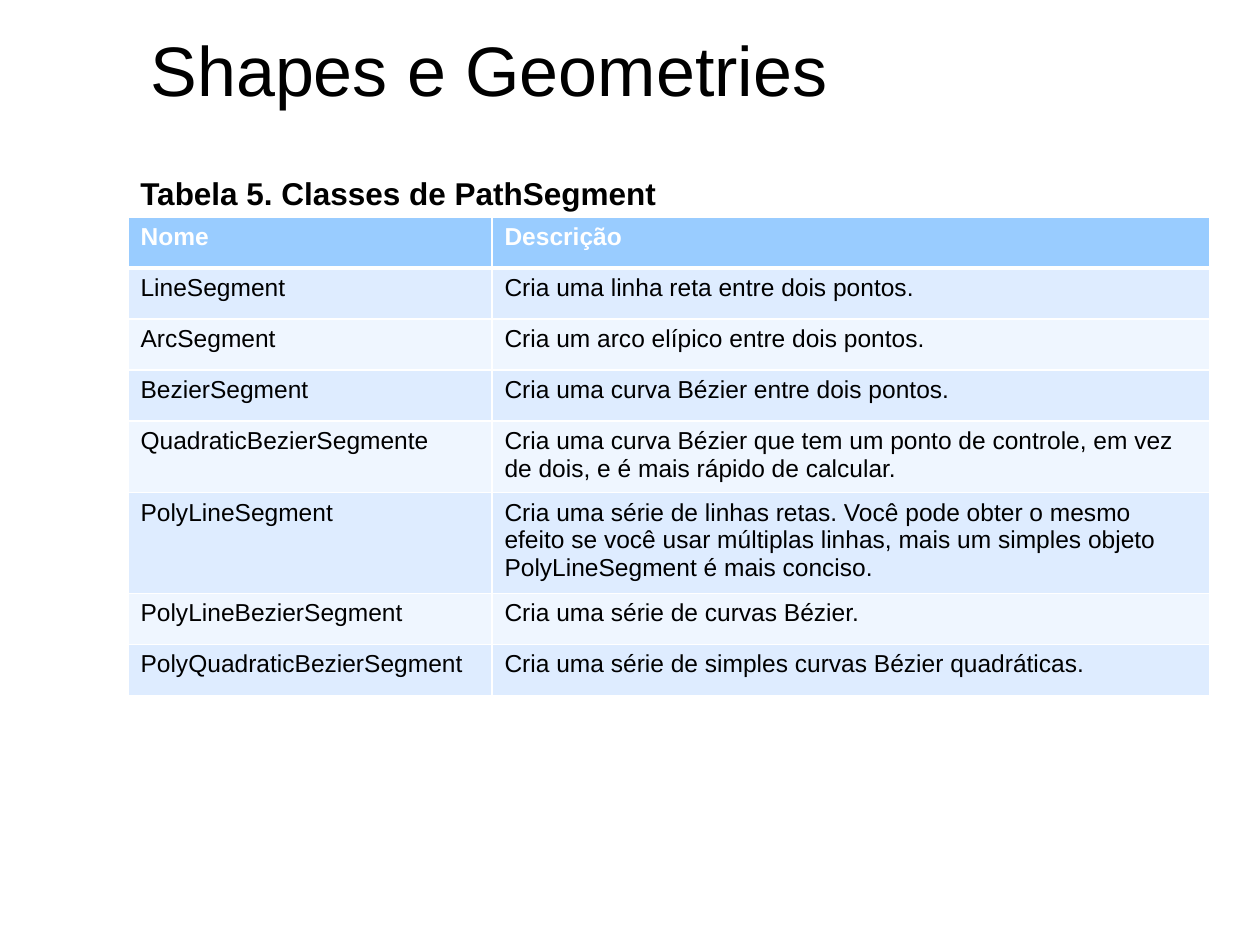
from lxml import etree
from pptx import Presentation
from pptx.dml.color import RGBColor
from pptx.enum.text import MSO_ANCHOR, PP_ALIGN
from pptx.oxml.ns import qn
from pptx.util import Emu, Pt

LEFT, TOP = PP_ALIGN.LEFT, MSO_ANCHOR.TOP
TITLE_ONLY = 5


def px(pixels):
    return Emu(round(pixels * 914400 / 126))


def write(frame, text, size, color, bold=False):
    frame.word_wrap = True
    frame.vertical_anchor = TOP
    paragraph = frame.paragraphs[0]
    paragraph.alignment = LEFT
    run = paragraph.add_run()
    run.text = text
    font_format = {"name": "Arial", "size": Pt(size), "bold": bold}
    for attribute, value in font_format.items():
        setattr(run.font, attribute, value)
    run.font.color.rgb = RGBColor.from_string(color)


prs = Presentation()
prs.slide_width, prs.slide_height = px(1260), px(945)
slide = prs.slides.add_slide(prs.slide_layouts[TITLE_ONLY])

# Title
title = slide.shapes.title
title_place = {"left": px(138), "top": px(20), "width": px(758), "height": px(97)}
for attribute, value in title_place.items():
    setattr(title, attribute, value)
write(title.text_frame, "Shapes e Geometries", 40, "000000")

# Table caption
caption = slide.shapes.add_textbox(px(128), px(168), px(1113), px(50))
write(caption.text_frame, "Tabela 5. Classes de PathSegment", 18, "000000", True)

# Table of segment classes
segments = [
    ("Nome", "Descrição"),
    ("LineSegment", "Cria uma linha reta entre dois pontos."),
    ("ArcSegment", "Cria um arco elípico entre dois pontos."),
    ("BezierSegment", "Cria uma curva Bézier entre dois pontos."),
    ("QuadraticBezierSegmente",
     "Cria uma curva Bézier que tem um ponto de controle, em vez de dois, "
     "e é mais rápido de calcular."),
    ("PolyLineSegment",
     "Cria uma série de linhas retas. Você pode obter o mesmo efeito se você "
     "usar múltiplas linhas, mais um simples objeto PolyLineSegment é mais conciso."),
    ("PolyLineBezierSegment", "Cria uma série de curvas Bézier."),
    ("PolyQuadraticBezierSegment", "Cria uma série de simples curvas Bézier quadráticas."),
]
table_height = px(479)
table_frame = slide.shapes.add_table(
    len(segments), 2, px(128), px(217), px(1082), table_height)
table = table_frame.table
for column, width in zip(table.columns, (364, 718)):
    column.width = px(width)

for row, entry in enumerate(segments):
    # Rows with longer descriptions grow to fit their text
    table.rows[row].height = px(51)
    header = row == 0
    fill = "99CCFF" if header else ("EFF6FF", "DEECFF")[row % 2]
    for col, text in enumerate(entry):
        cell = table.cell(row, col)
        write(cell.text_frame, text, 14, "FFFFFF" if header else "000000", header)
        cell.vertical_anchor = TOP
        cell.fill.solid()
        cell.fill.fore_color.rgb = RGBColor.from_string(fill)
        # White borders, heavier between header and body; they precede the fill
        borders = {"a:lnL": 1, "a:lnR": 1,
                   "a:lnT": 3 if row == 1 else 1, "a:lnB": 3 if header else 1}
        properties = cell._tc.get_or_add_tcPr()
        for position, (tag, points) in enumerate(borders.items()):
            line = etree.Element(qn(tag), w=str(Pt(points)))
            solid = etree.SubElement(line, qn("a:solidFill"))
            etree.SubElement(solid, qn("a:srgbClr"), val="FFFFFF")
            properties.insert(position, line)
table_frame.height = table_height

prs.save("out.pptx")
